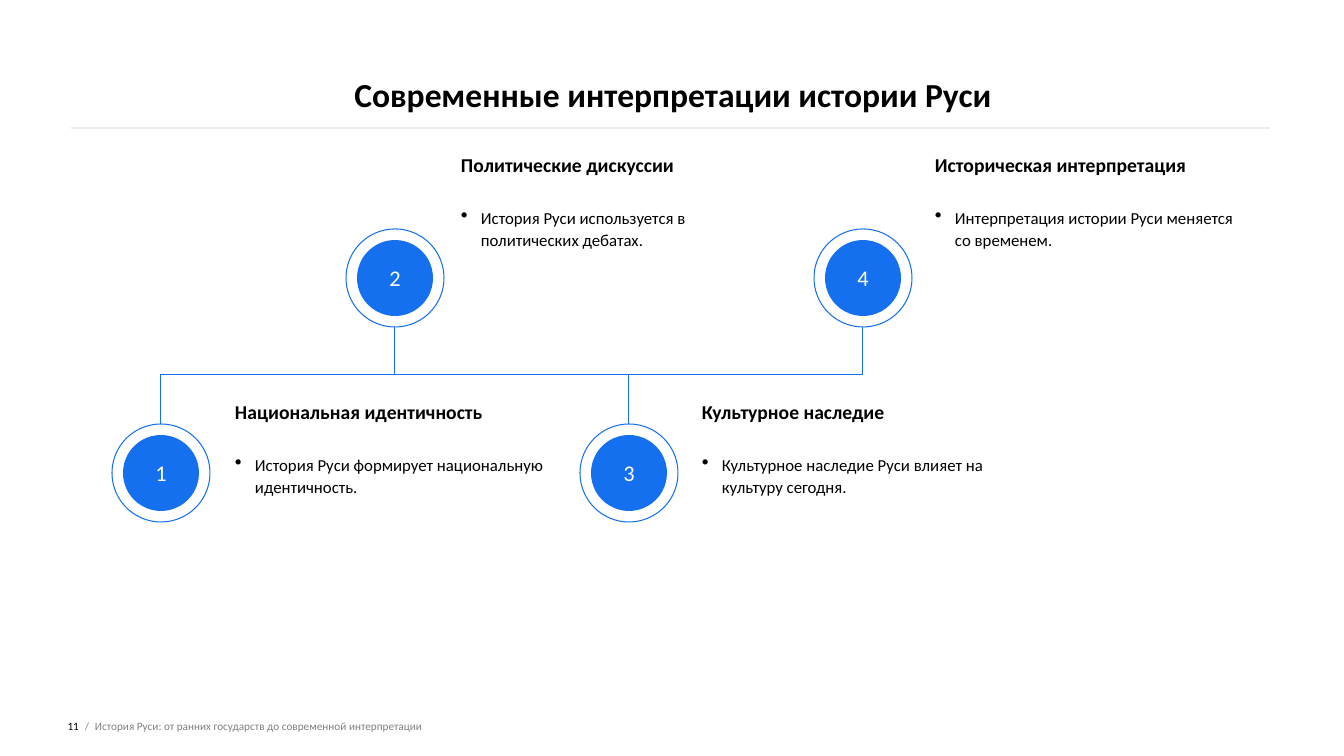
"""Build the timeline slide on modern interpretations of the history of Rus."""
import lxml.etree
import pptx
import pptx.dml.color
import pptx.enum.shapes
import pptx.enum.text
import pptx.oxml.ns
import pptx.util

PX = 914400 / 100.8
BLUE, BLACK, GREY, WHITE, RULE = "1570EF", "000000", "808080", "FFFFFF", "EAECF0"
ALIGN = pptx.enum.text.PP_ALIGN
ANCHOR = pptx.enum.text.MSO_ANCHOR
OVAL = pptx.enum.shapes.MSO_SHAPE.OVAL
qn = pptx.oxml.ns.qn


def rgb(value):
    return pptx.dml.color.RGBColor.from_string(value)


def write(sp, text, size, color, bold=False, align=ALIGN.LEFT, anchor=ANCHOR.TOP, spacing=1.0):
    tf = sp.text_frame
    frame = {"word_wrap": True, "vertical_anchor": anchor, "margin_left": 0,
             "margin_right": 0, "margin_top": 0, "margin_bottom": 0}
    p = tf.paragraphs[0]
    r = p.add_run()
    r.text = text
    r.font.color.rgb = rgb(color)
    formats = [(tf, frame), (p, {"alignment": align, "line_spacing": spacing}),
               (r.font, {"name": "Calibri", "size": pptx.util.Pt(size), "bold": bold})]
    for target, values in formats:
        for name, value in values.items():
            setattr(target, name, value)
    return p


prs = pptx.Presentation()
prs.slide_width, prs.slide_height = round(1344 * PX), round(756 * PX)
s = prs.slides.add_slide(prs.slide_layouts[6])

rule = s.shapes.add_connector(pptx.enum.shapes.MSO_CONNECTOR.STRAIGHT,
                              *[round(v * PX) for v in (71, 128, 1270, 128)])
rule.line.color.rgb = rgb(RULE)
rule.line.width = pptx.util.Pt(2)
lxml.etree.SubElement(rule._element.spPr, qn("a:effectLst"))

labels = [
    ((71, 0, 1204, 114), "Современные интерпретации истории Руси", 24, BLACK, True, ALIGN.CENTER, ANCHOR.BOTTOM),
    ((47, 696, 32, 60), "11", 8, BLACK, False, ALIGN.RIGHT, ANCHOR.MIDDLE),
    ((85, 696, 10, 60), "/", 8, GREY, False, ALIGN.LEFT, ANCHOR.MIDDLE),
    ((95, 696, 868, 60), "История Руси: от ранних государств до современной интерпретации",
     8, GREY, False, ALIGN.LEFT, ANCHOR.MIDDLE),
]
for box, *style in labels:
    write(s.shapes.add_textbox(*[round(v * PX) for v in box]), *style)

RING, DISC, LOW, HIGH = 98, 76, 473, 278
steps = [
    (235, "Национальная идентичность", "История Руси формирует национальную идентичность."),
    (461, "Политические дискуссии", "История Руси используется в политических дебатах."),
    (702, "Культурное наследие", "Культурное наследие Руси влияет на культуру сегодня."),
    (935, "Историческая интерпретация", "Интерпретация истории Руси меняется со временем."),
]
centers = [(161 + 234 * i, HIGH if i % 2 else LOW) for i in range(len(steps))]

for (x1, y1), (x2, y2) in zip(centers, centers[1:]):
    reach = RING // 2 if y2 > y1 else -RING // 2
    middle = (y1 + y2) // 2
    fb = s.shapes.build_freeform(x1, y1 + reach, scale=PX)
    fb.add_line_segments([(x1, middle), (x2, middle), (x2, y2 - reach)], close=False)
    link = fb.convert_to_shape()
    link.shadow.inherit = False
    link.fill.background()
    link.line.color.rgb = rgb(BLUE)
    link.line.width = pptx.util.Pt(0.75)

for number, ((x, y), (left, heading, body)) in enumerate(zip(centers, steps), 1):
    disc, ring = [s.shapes.add_shape(OVAL, *[round(v * PX) for v in (x - d // 2, y - d // 2, d, d)])
                  for d in (DISC, RING)]
    for sp in (disc, ring):
        sp.shadow.inherit = False
    disc.fill.solid()
    disc.fill.fore_color.rgb = rgb(BLUE)
    disc.line.fill.background()
    write(disc, str(number), 16, WHITE, align=ALIGN.CENTER, anchor=ANCHOR.MIDDLE)
    ring.fill.background()
    ring.line.color.rgb = rgb(BLUE)
    ring.line.width = pptx.util.Pt(0.75)

    top = 156 if y == HIGH else 403
    head_box, body_box = [s.shapes.add_textbox(*[round(v * PX) for v in (left, t, 312, h)])
                          for t, h in ((top, 40), (top + 50, 151))]
    write(head_box, heading, 14, BLACK, True, spacing=0.9)
    p = write(body_box, body, 12, BLACK, spacing=1.1)
    pPr = p._p.get_or_add_pPr()
    pPr.set("marL", str(round(20 * PX)))
    pPr.set("indent", str(round(-20 * PX)))
    lxml.etree.SubElement(pPr, qn("a:buSzPct"), val="120000")
    lxml.etree.SubElement(pPr, qn("a:buChar"), char="•")

prs.save("out.pptx")
